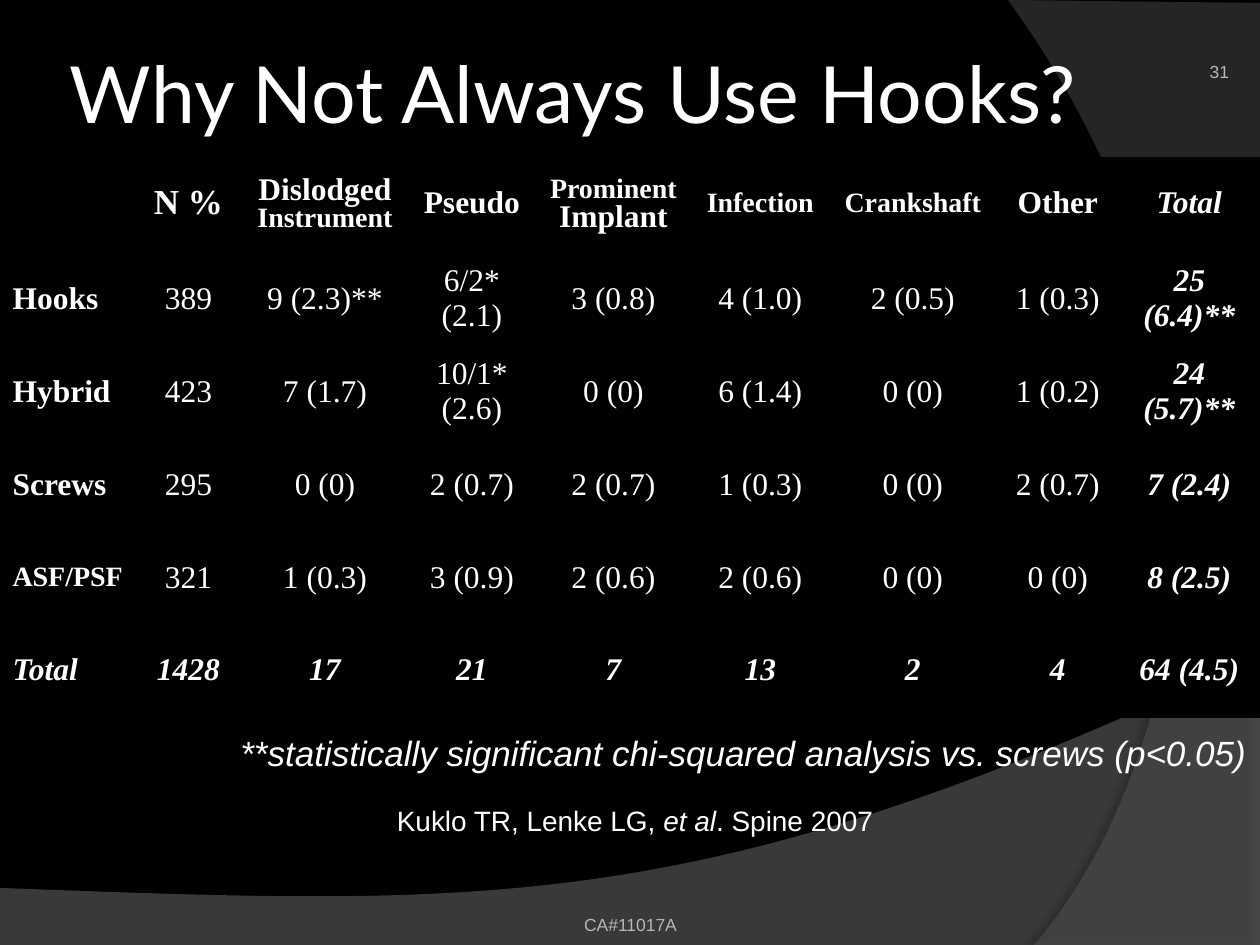
from lxml import etree
from pptx import Presentation
from pptx.dml.color import RGBColor
from pptx.enum.text import MSO_ANCHOR, MSO_AUTO_SIZE, PP_ALIGN
from pptx.oxml.ns import qn
from pptx.util import Emu, Pt

SCALE = 914400 / 126
LEFT, MID, RIGHT = PP_ALIGN.LEFT, PP_ALIGN.CENTER, PP_ALIGN.RIGHT
TOP, CENTRE, BASE = MSO_ANCHOR.TOP, MSO_ANCHOR.MIDDLE, MSO_ANCHOR.BOTTOM
FIXED = MSO_AUTO_SIZE.NONE
COLORS = {"black": "000000", "white": "FFFFFF", "wave": "7F7F7F",
          "side": "5E5E5E", "foot": "B7B7B7"}
SANS, SERIF, HEAD = "Arial", "Times New Roman", "Lato"
WIDTHS = [136, 105, 168, 126, 157, 137, 168, 122, 141]
HEIGHTS = [94] + [93] * 5
HEADS = [[], [("N %", 20)], [("Dislodged", 18), ("Instrument", 16)],
         [("Pseudo", 18)], [("Prominent", 16), ("Implant", 18)],
         [("Infection", 16)], [("Crankshaft", 16)], [("Other", 18)],
         [("Total", 18)]]
ROWS = [
    ["Hooks", "389", "9 (2.3)**", "6/2* (2.1)", "3 (0.8)", "4 (1.0)",
     "2 (0.5)", "1 (0.3)", "25 (6.4)**"],
    ["Hybrid", "423", "7 (1.7)", "10/1* (2.6)", "0 (0)", "6 (1.4)",
     "0 (0)", "1 (0.2)", "24 (5.7)**"],
    ["Screws", "295", "0 (0)", "2 (0.7)", "2 (0.7)", "1 (0.3)",
     "0 (0)", "2 (0.7)", "7 (2.4)"],
    ["ASF/PSF", "321", "1 (0.3)", "3 (0.9)", "2 (0.6)", "2 (0.6)",
     "0 (0)", "0 (0)", "8 (2.5)"],
    ["Total", "1428", "17", "21", "7", "13", "2", "4", "64 (4.5)"],
]


def px(n):
    return Emu(round(n * SCALE))


def rgb(name):
    return RGBColor.from_string(COLORS[name])


def add(parent, tag, **attrs):
    return etree.SubElement(parent, qn(tag), {k: str(v) for k, v in attrs.items()})


def curve(a, b, c, d, steps=60):
    for n in range(1, steps + 1):
        t = n / steps
        u = 1 - t
        yield tuple(u**3 * p + 3 * u * u * t * q + 3 * u * t * t * r + t**3 * s
                    for p, q, r, s in zip(a, b, c, d))


class Deck:
    """Hold the style and the current slide, and draw each kind of element."""

    def __init__(self):
        self.prs = Presentation()
        self.prs.slide_width, self.prs.slide_height = px(1260), px(945)
        self.slide = self.prs.slides.add_slide(self.prs.slide_layouts[5])
        self.shapes = self.slide.shapes
        fill = self.slide.background.fill
        fill.solid()
        fill.fore_color.rgb = rgb("black")

    def style(self, para, size, face, color="white", bold=False, ital=False):
        font = para.font
        font.size, font.name = Pt(size), face
        font.bold, font.italic = bold, ital
        font.color.rgb = rgb(color)

    def swoosh(self, points, color, alpha, shade, dist, angle):
        start, *rest = [(px(x), px(y)) for x, y in points]
        pen = self.shapes.build_freeform(*start)
        pen.add_line_segments(rest, close=True)
        shape = pen.convert_to_shape()
        shape.line.fill.background()
        shape.fill.solid()
        shape.fill.fore_color.rgb = rgb(color)
        props = shape.element.spPr
        add(props.find(".//" + qn("a:srgbClr")), "a:alpha", val=alpha * 1000)
        shape.shadow.inherit = False
        glow = add(props.find(qn("a:effectLst")), "a:outerShdw", blurRad=Pt(4),
                   dist=Pt(dist), dir=angle * 60000, algn="ctr", rotWithShape=0)
        tint = add(glow, "a:srgbClr", val=COLORS["black"])
        add(tint, "a:alpha", val=shade * 1000)

    def title(self, text, box, inset):
        shape = self.shapes.title
        shape.left, shape.top, shape.width, shape.height = map(px, box)
        frame = shape.text_frame
        frame.text = text
        frame.auto_size, frame.vertical_anchor = FIXED, CENTRE
        frame.margin_left = px(inset)
        para = frame.paragraphs[0]
        para.alignment, para.line_spacing = LEFT, 0.8
        self.style(para, 45, HEAD)
        self.shapes.element.append(shape.element)

    def text(self, runs, box, size, align, color="white", ital=False,
             anchor=TOP, inset=(13, 6, 13, 6)):
        frame = self.shapes.add_textbox(*map(px, box)).text_frame
        frame.word_wrap, frame.vertical_anchor = True, anchor
        (frame.margin_left, frame.margin_top,
         frame.margin_right, frame.margin_bottom) = map(px, inset)
        para = frame.paragraphs[0]
        para.alignment = align
        self.style(para, size, SANS, color, ital=ital)
        for words, slant in runs:
            run = para.add_run()
            run.text = words
            if slant != ital:
                run.font.italic = slant

    def cell(self, cell, lines, align, bold, ital, gap=None):
        props = cell._tc.get_or_add_tcPr()
        for side in "LRTB":
            edge = add(props, "a:ln" + side, w=Pt(1))
            add(add(edge, "a:solidFill"), "a:srgbClr", val=COLORS["black"])
        cell.fill.solid()
        cell.fill.fore_color.rgb = rgb("black")
        cell.vertical_anchor = CENTRE
        frame = cell.text_frame
        for n, (words, size) in enumerate(lines):
            para = frame.add_paragraph() if n else frame.paragraphs[0]
            para.text = words
            para.alignment, para.line_spacing = align, gap
            self.style(para, size, SERIF, bold=bold, ital=ital)

    def table(self, heads, rows, box):
        grid = self.shapes.add_table(len(rows) + 1, len(heads), *map(px, box)).table
        for col, wide in zip(grid.columns, WIDTHS):
            col.width = px(wide)
        for row, high in zip(grid.rows, HEIGHTS):
            row.height = px(high)
        last = len(heads) - 1
        for c, lines in enumerate(heads):
            self.cell(grid.cell(0, c), lines, MID, True, c == last, 0.85)
        for r, row in enumerate(rows, 1):
            for c, words in enumerate(row):
                total = r == len(rows) or c == last
                size = 16 if words == "ASF/PSF" else 18
                self.cell(grid.cell(r, c), [(words, size)], MID if c else LEFT,
                          total or c == 0, total)


def main():
    deck = Deck()
    wave = curve((1260, 655), (704, 919), (493, 906), (0, 888))
    deck.swoosh([(0, 888), (0, 946), (1260, 946), (1260, 655), *wave],
                "wave", 45, 35, 3.5, 270)
    side = curve((1034, 945), (1178, 780), (1283, 378), (1008, 0))
    deck.swoosh([(1260, 3), (1260, 945), (1034, 945), *side],
                "side", 40, 45, 4, 180)
    deck.table(HEADS, ROWS, (0, 158, sum(WIDTHS), sum(HEIGHTS)))
    deck.text([("**statistically significant chi-squared analysis vs. screws (p<0.05)",
                True)], (210, 725, 1050, 54), 20, RIGHT, ital=True)
    deck.text([("Kuklo TR, Lenke LG, ", False), ("et al", True),
               (". Spine 2007", False)], (10, 798, 1250, 47), 16, MID)
    deck.title("Why Not Always Use Hooks?", (0, 44, 1260, 113), 70)
    deck.text([("CA#11017A", False)], (431, 885, 399, 50), 10, MID, "foot",
              anchor=BASE, inset=(0, 6, 0, 0))
    deck.text([("31", False)], (1124, 32, 105, 50), 10, RIGHT, "foot",
              anchor=BASE, inset=(0, 0, 0, 0))
    deck.prs.save("out.pptx")


if __name__ == "__main__":
    main()
